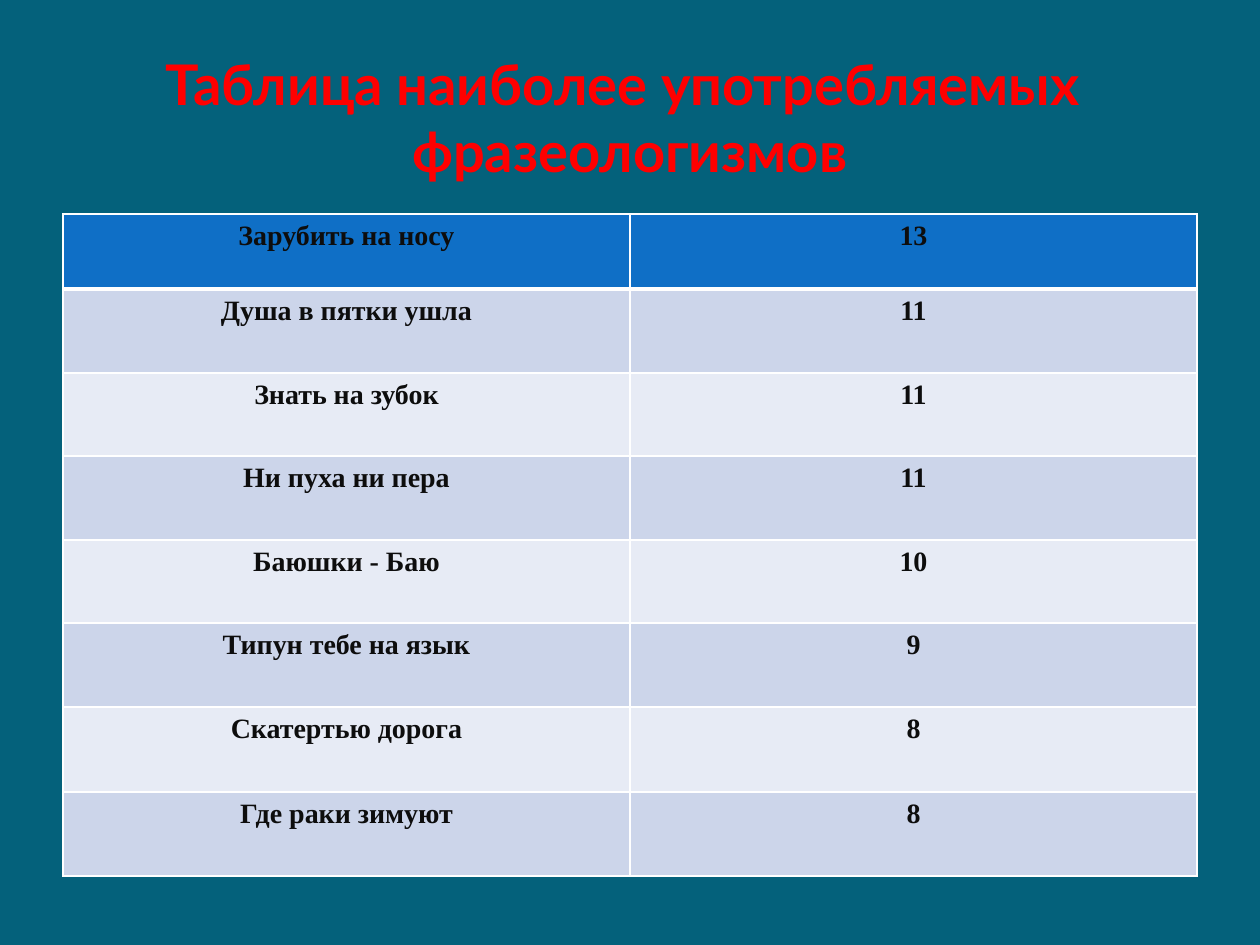
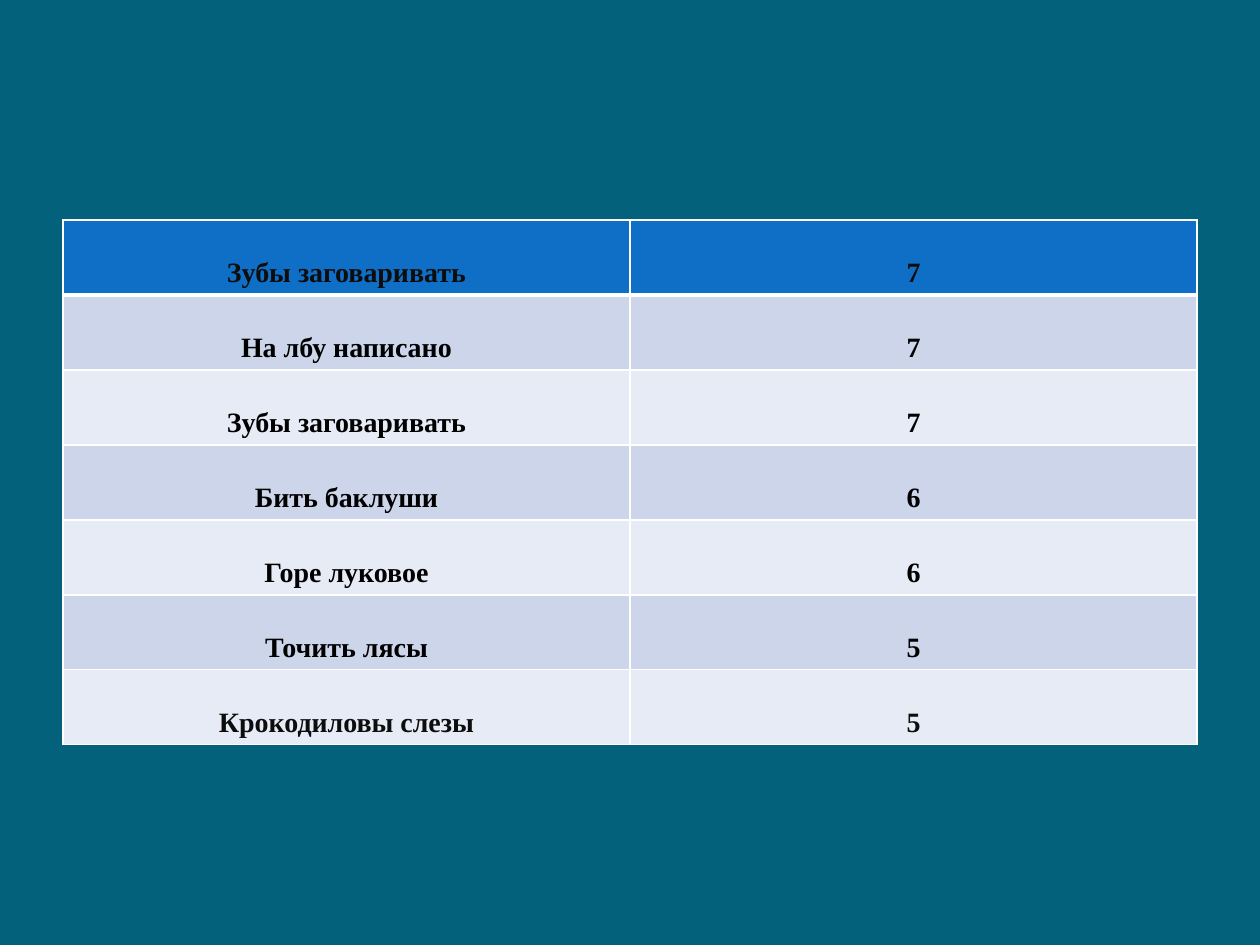
from dataclasses import dataclass

from lxml.etree import SubElement
from pptx import Presentation
from pptx.dml.color import RGBColor as Rgb
from pptx.enum.text import MSO_ANCHOR as Anchor, PP_ALIGN as Align
from pptx.oxml.ns import qn
from pptx.slide import Slide
from pptx.table import _Cell as Cell
from pptx.text.text import _Paragraph as Para
from pptx.util import Emu, Pt

# Shared look
SCALE = 914400 / 126
BACK, HEAD, WHITE, RED = "04617B", "0F6FC6", "FFFFFF", "FF0000"
BANDS = ("CCD5EA", "E7EBF5")
INK, BLACK = "0D0D0D", "000000"
LEFT, WIDTH = 63, 1134


@dataclass
class Grid:
    top: int
    heights: list[int]
    rows: list[tuple[str, int]]
    spacing: float
    body: str
    foot: int


def px(size: int) -> Emu:
    return Emu(round(size * SCALE))


def color(code: str) -> Rgb:
    return Rgb.from_string(code)


def style(para: Para, face: str, size: int, ink: str) -> None:
    para.alignment = Align.CENTER
    font = para.font
    font.name, font.size, font.bold = face, Pt(size), True
    font.color.rgb = color(ink)


def edge(cell: Cell, side: str, width: int) -> None:
    props = cell._tc.get_or_add_tcPr()
    line = SubElement(props, qn(f"a:ln{side}"), w=str(Pt(width)))
    fill = SubElement(line, qn("a:solidFill"))
    SubElement(fill, qn("a:srgbClr"), val=WHITE)


def add_page(deck: Presentation) -> Slide:
    page = deck.slides.add_slide(deck.slide_layouts[6])
    fill = page.background.fill
    fill.solid()
    fill.fore_color.rgb = color(BACK)
    return page


def add_title(page: Slide, text: str) -> None:
    box = page.shapes.add_textbox(px(LEFT), px(38), px(WIDTH), px(157))
    frame = box.text_frame
    frame.word_wrap = True
    frame.vertical_anchor = Anchor.MIDDLE
    para = frame.paragraphs[0]
    para.text = text
    style(para, "Lato", 32, RED)


def add_grid(page: Slide, grid: Grid) -> None:
    frame = page.shapes.add_table(len(grid.rows), 2, px(LEFT), px(grid.top),
                                  px(WIDTH), px(sum(grid.heights)))
    table = frame.table
    table.first_row = table.horz_banding = False
    last = len(grid.rows) - 1
    for i, (row, height) in enumerate(zip(grid.rows, grid.heights)):
        table.rows[i].height = px(height)
        shade = BANDS[(i - 1) % 2] if i else HEAD
        # The thick rule lies under the first row
        widths = {"L": 1, "R": 1, "T": 3 if i == 1 else 1, "B": 1 if i else 3}
        for j, value in enumerate(row):
            cell = table.cell(i, j)
            cell.margin_bottom = px(grid.foot)
            for side, width in widths.items():
                edge(cell, side, width)
            cell.fill.solid()
            cell.fill.fore_color.rgb = color(shade)
            para = cell.text_frame.paragraphs[0]
            para.text = str(value)
            para.line_spacing = grid.spacing
            ink = grid.body if 0 < i < last else INK
            style(para, "Times New Roman", 16, ink)


# Content
COMMON = Grid(214, [75, 84, 83, 84, 83, 84, 85, 84], [
    ("Зарубить на носу", 13),
    ("Душа в пятки ушла", 11),
    ("Знать на зубок", 11),
    ("Ни пуха ни пера", 11),
    ("Баюшки - Баю", 10),
    ("Типун тебе на язык", 9),
    ("Скатертью дорога", 8),
    ("Где раки зимуют", 8),
], 1.0, INK, 6)

RARE = Grid(220, [75] * 7, [
    ("Зубы заговаривать", 7),
    ("На лбу написано", 7),
    ("Зубы заговаривать", 7),
    ("Бить баклуши", 6),
    ("Горе луковое", 6),
    ("Точить лясы", 5),
    ("Крокодиловы слезы", 5),
], 2.0, BLACK, 0)


def main() -> None:
    deck = Presentation()
    deck.slide_width, deck.slide_height = px(1260), px(945)

    # Slide 1: title and the most common idioms
    page = add_page(deck)
    add_title(page, "Таблица наиболее употребляемых \vфразеологизмов")
    add_grid(page, COMMON)

    # Slide 2: the rest of the list
    add_grid(add_page(deck), RARE)

    deck.save("out.pptx")


if __name__ == "__main__":
    main()
